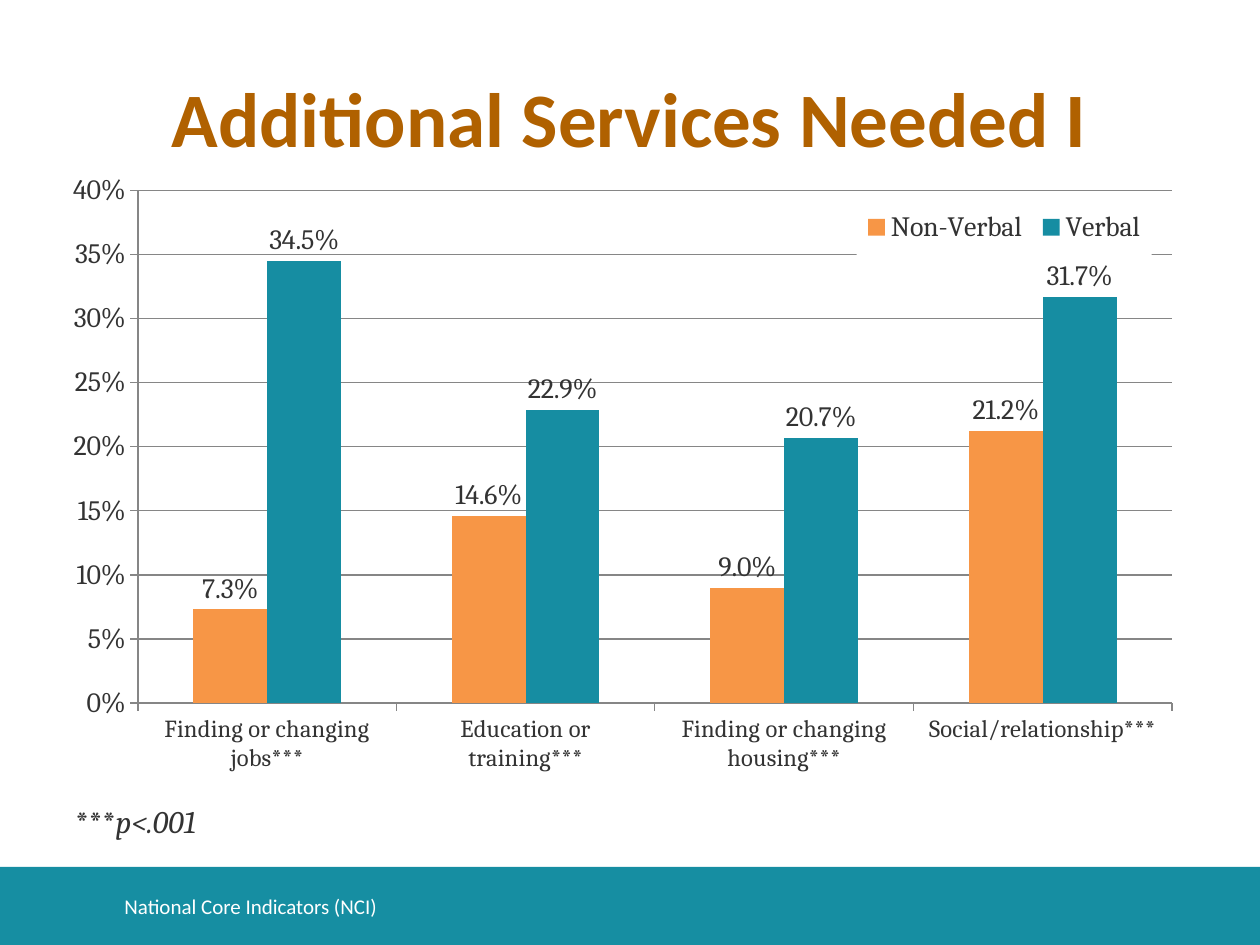
from pptx import Presentation, util as u
from pptx.chart.data import CategoryChartData
from pptx.dml.color import RGBColor
from pptx.enum import chart as ch, shapes, text
from pptx.oxml import parse_xml
from pptx.oxml.ns import nsdecls

TEAL, ORANGE, BROWN = "168EA2", "F79646", "B06100"
DARK, GREY, WHITE = "333333", "868686", "FFFFFF"


def color(code):
    return RGBColor.from_string(code)


def style(font, size, code, name, bold=False, slant=False):
    font.size, font.name = u.Pt(size), name
    font.color.rgb = color(code)
    font.bold, font.italic = bold, slant


def place(shape, box):
    shape.left, shape.top, shape.width, shape.height = map(u.Pt, box)


def layout(box, inner=False):
    """Return a manual chart layout; box holds fractions of the chart."""
    target = '<c:layoutTarget val="inner"/>' if inner else ""
    modes = "".join(f'<c:{k}Mode val="edge"/>' for k in "xy")
    sizes = "".join(f'<c:{k} val="{v}"/>' for k, v in zip("xywh", box))
    return parse_xml(f'<c:layout {nsdecls("c")}><c:manualLayout>{target}{modes}'
                     f'{sizes}</c:manualLayout></c:layout>')


class Deck:
    """Holds the fonts and the current slide."""
    head, body = "Calibri", "Cambria"

    def __init__(self, prs):
        self.slide = prs.slides.add_slide(prs.slide_layouts[5])

    def title(self, words, box):
        shape = self.slide.shapes.title
        place(shape, box)
        frame = shape.text_frame
        frame.text = words
        frame.vertical_anchor = text.MSO_ANCHOR.MIDDLE
        line = frame.paragraphs[0]
        line.alignment = text.PP_ALIGN.CENTER
        style(line.runs[0].font, 44, BROWN, self.head, bold=True)

    def band(self, box, fill):
        shape = self.slide.shapes.add_shape(
            shapes.MSO_SHAPE.RECTANGLE, *map(u.Pt, box))
        shape.shadow.inherit = False
        shape.fill.solid()
        shape.fill.fore_color.rgb = color(fill)
        shape.line.fill.background()

    def label(self, parts, box, size, code, name, anchor):
        """Add one line of text; parts are (words, italic) pairs."""
        frame = self.slide.shapes.add_textbox(*map(u.Pt, box)).text_frame
        frame.word_wrap = True
        frame.vertical_anchor = anchor
        for words, slant in parts:
            run = frame.paragraphs[0].add_run()
            run.text = words
            style(run.font, size, code, name, slant=slant)

    def chart(self, cats, series, box, plot, legend):
        """Add clustered columns; series are (name, values, fill)."""
        data = CategoryChartData(number_format="0.0%")
        data.categories = cats
        for name, vals, _ in series:
            data.add_series(name, vals)
        chart = self.slide.shapes.add_chart(
            ch.XL_CHART_TYPE.COLUMN_CLUSTERED, *map(u.Pt, box), data).chart
        chart.has_title = False
        style(chart.font, 10, DARK, self.body)
        self.axes(chart)
        bars = chart.plots[0]
        bars.gap_width, bars.overlap = 150, 0
        bars.vary_by_categories = False
        for item, (_, _, fill) in zip(bars.series, series):
            item.format.fill.solid()
            item.format.fill.fore_color.rgb = color(fill)
            tags = item.data_labels
            tags.show_value = True
            tags.number_format, tags.number_format_is_linked = "0.0%", False
            tags.position = ch.XL_LABEL_POSITION.OUTSIDE_END
            style(tags.font, 16, DARK, self.body)
        area = chart._chartSpace.xpath("c:chart/c:plotArea")[0]
        for old in area.xpath("c:layout"):
            area.remove(old)
        area.insert(0, layout(plot, inner=True))
        self.legend(chart, legend)

    def axes(self, chart):
        cat, val = chart.category_axis, chart.value_axis
        val.minimum_scale, val.maximum_scale, val.major_unit = 0, 0.4, 0.05
        val.has_major_gridlines = True
        val.tick_labels.number_format = "0%"
        val.tick_labels.number_format_is_linked = False
        for axis, size in ((cat, 14), (val, 16)):
            axis.major_tick_mark = ch.XL_TICK_MARK.OUTSIDE
            style(axis.tick_labels.font, size, DARK, self.body)
        for part in (cat, val, val.major_gridlines):
            part.format.line.color.rgb = color(GREY)
            part.format.line.width = u.Pt(0.75)

    def legend(self, chart, box):
        chart.has_legend = True
        key = chart.legend
        key.position = ch.XL_LEGEND_POSITION.RIGHT
        key.include_in_layout = False
        style(key.font, 16, DARK, self.body)
        node = chart._chartSpace.xpath("c:chart/c:legend")[0]
        for old in node.xpath("c:layout"):
            node.remove(old)
        node.xpath("c:legendPos")[0].addnext(layout(box))
        node.xpath("c:overlay")[0].addnext(parse_xml(
            f'<c:spPr {nsdecls("c", "a")}><a:solidFill><a:srgbClr val="{WHITE}"/>'
            '</a:solidFill><a:ln><a:noFill/></a:ln></c:spPr>'))


def main():
    prs = Presentation()
    prs.slide_width, prs.slide_height = u.Pt(720), u.Pt(540)
    deck = Deck(prs)
    deck.band((0, 495.4, 720, 44.6), TEAL)
    deck.title("Additional Services Needed I", (36, 21.6, 648, 90))
    deck.label([("National Core Indicators (NCI)", False)],
               (64, 503.3, 533, 28.8), 12, WHITE, deck.head,
               text.MSO_ANCHOR.MIDDLE)
    deck.label([("***", False), ("p<.001", True)], (36, 455, 242, 51),
               18, DARK, deck.body, text.MSO_ANCHOR.TOP)
    deck.chart(
        ["Finding or changing jobs***", "Education or training***",
         "Finding or changing housing***", "Social/relationship***"],
        [("Non-Verbal", (0.073, 0.146, 0.09, 0.212), ORANGE),
         ("Verbal", (0.345, 0.229, 0.207, 0.317), "168DA2")],
        (36, 97.9, 648, 376.6),
        plot=(0.066, 0.029, 0.912, 0.778), legend=(0.7, 0.04, 0.26, 0.09))
    prs.save("out.pptx")


if __name__ == "__main__":
    main()
